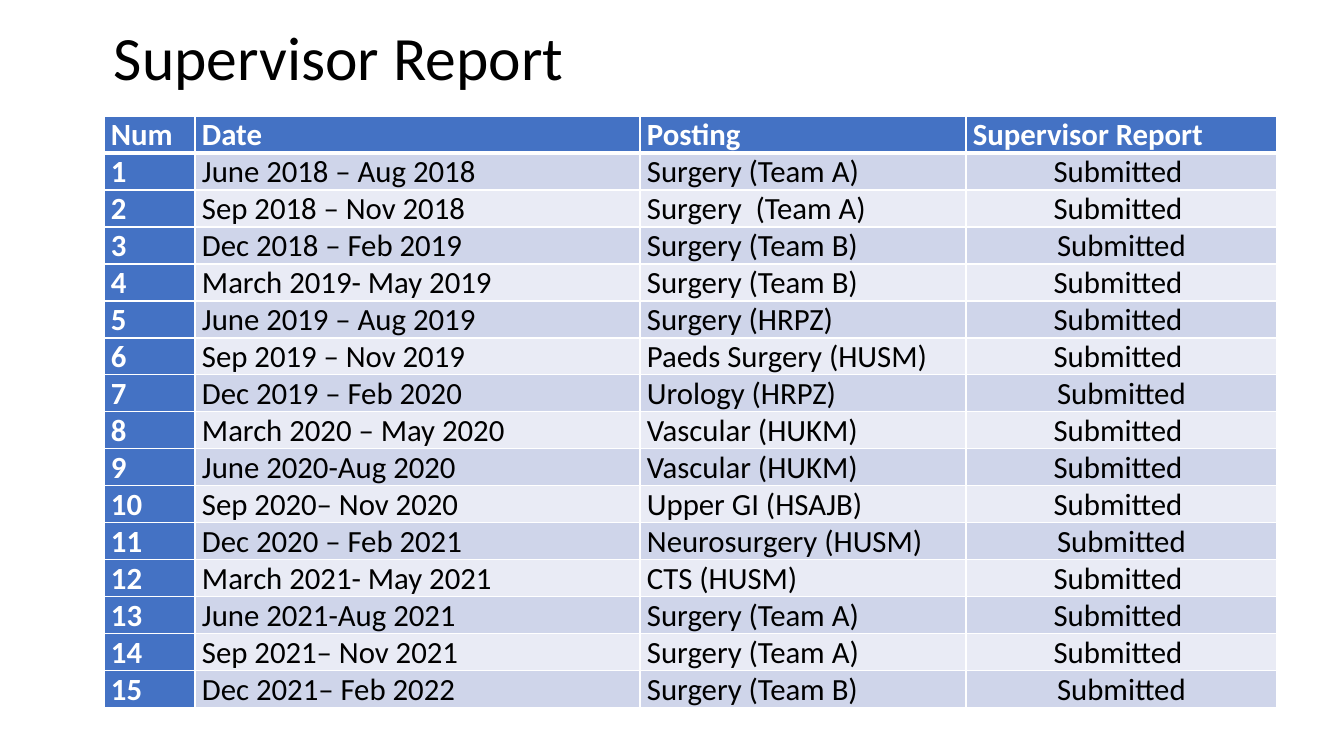
from lxml.etree import SubElement
from pptx import Presentation
from pptx.dml.color import RGBColor
from pptx.enum.text import MSO_ANCHOR, PP_ALIGN
from pptx.oxml.ns import qn
from pptx.util import Pt

# Content
TITLE = "Supervisor Report"
HEADINGS = ("Num", "Date", "Posting", "Supervisor Report")
POSTINGS = [
    ("June 2018 – Aug 2018", "Surgery (Team A)", "Submitted "),
    ("Sep 2018 – Nov 2018", "Surgery  (Team A)", "Submitted "),
    ("Dec 2018 – Feb 2019", "Surgery (Team B)", "Submitted"),
    ("March 2019- May 2019", "Surgery (Team B)", "Submitted "),
    ("June 2019 – Aug 2019", "Surgery (HRPZ)", "Submitted "),
    ("Sep 2019 – Nov 2019", "Paeds Surgery (HUSM)", "Submitted "),
    ("Dec 2019 – Feb 2020", "Urology (HRPZ)", "Submitted"),
    ("March 2020 – May 2020", "Vascular (HUKM)", "Submitted "),
    ("June 2020-Aug 2020", "Vascular (HUKM)", "Submitted "),
    ("Sep 2020– Nov 2020", "Upper GI (HSAJB)", "Submitted "),
    ("Dec 2020 – Feb 2021", "Neurosurgery (HUSM)", "Submitted"),
    ("March 2021- May 2021", "CTS (HUSM)", "Submitted "),
    ("June 2021-Aug 2021", "Surgery (Team A)", "Submitted "),
    ("Sep 2021– Nov 2021", "Surgery (Team A)", "Submitted "),
    ("Dec 2021– Feb 2022", "Surgery (Team B)", "Submitted"),
]

# Look
FONT = "Calibri"
BLACK = RGBColor(0x00, 0x00, 0x00)
WHITE = RGBColor(0xFF, 0xFF, 0xFF)
BLUE = RGBColor(0x44, 0x72, 0xC4)
BANDS = (RGBColor(0xE9, 0xEB, 0xF5), RGBColor(0xCF, 0xD5, 0xEA))

# Layout in px
SLIDE_SIZE = (1344, 756)
TITLE_BOX = (104, 18, 1159, 86)
TABLE_LEFT, TABLE_TOP = 104, 116
COLUMN_WIDTHS = (91, 445, 326, 311)
ROW_HEIGHT = 37
CELL_INSET = 7


def px(length):
    return round(length * 914400 / 100.8)


def add_text(para, text, size, color, bold=False):
    span = para.add_run()
    span.text = text
    span.font.name = FONT
    span.font.size = Pt(size)
    span.font.bold = bold
    span.font.color.rgb = color


def add_borders(cell, bottom_width):
    properties = cell._tc.get_or_add_tcPr()
    for side, width in (("L", 1), ("R", 1), ("T", 1), ("B", bottom_width)):
        line = SubElement(properties, qn(f"a:ln{side}"), w=str(Pt(width)))
        fill = SubElement(line, qn("a:solidFill"))
        SubElement(fill, qn("a:srgbClr"), val=str(WHITE))


deck = Presentation()
deck.slide_width, deck.slide_height = map(px, SLIDE_SIZE)
page = deck.slides.add_slide(deck.slide_layouts[6])

# Title
box = page.shapes.add_textbox(*map(px, TITLE_BOX))
frame = box.text_frame
frame.word_wrap = True
frame.vertical_anchor = MSO_ANCHOR.MIDDLE
frame.paragraphs[0].line_spacing = 0.9
add_text(frame.paragraphs[0], TITLE, 44, BLACK)

# Table grid
rows = [HEADINGS] + [(str(n), *posting) for n, posting in enumerate(POSTINGS, 1)]
table = page.shapes.add_table(
    len(rows), len(HEADINGS), px(TABLE_LEFT), px(TABLE_TOP),
    px(sum(COLUMN_WIDTHS)), px(ROW_HEIGHT * len(rows))).table
table.first_col = True
for column, width in zip(table.columns, COLUMN_WIDTHS):
    column.width = px(width)

# Table cells: blue heading row and number column, banded body
for r, texts in enumerate(rows):
    table.rows[r].height = px(ROW_HEIGHT)
    for c, text in enumerate(texts):
        cell = table.cell(r, c)
        is_heading = r == 0 or c == 0
        cell.margin_left = cell.margin_right = px(CELL_INSET)
        cell.margin_top = cell.margin_bottom = 0
        add_borders(cell, 3 if r == 0 else 1)
        cell.fill.solid()
        cell.fill.fore_color.rgb = BLUE if is_heading else BANDS[r % 2]
        para = cell.text_frame.paragraphs[0]
        if r > 0 and c == len(HEADINGS) - 1:
            para.alignment = PP_ALIGN.CENTER
        add_text(para, text, 22, WHITE if is_heading else BLACK, is_heading)

deck.save("out.pptx")
